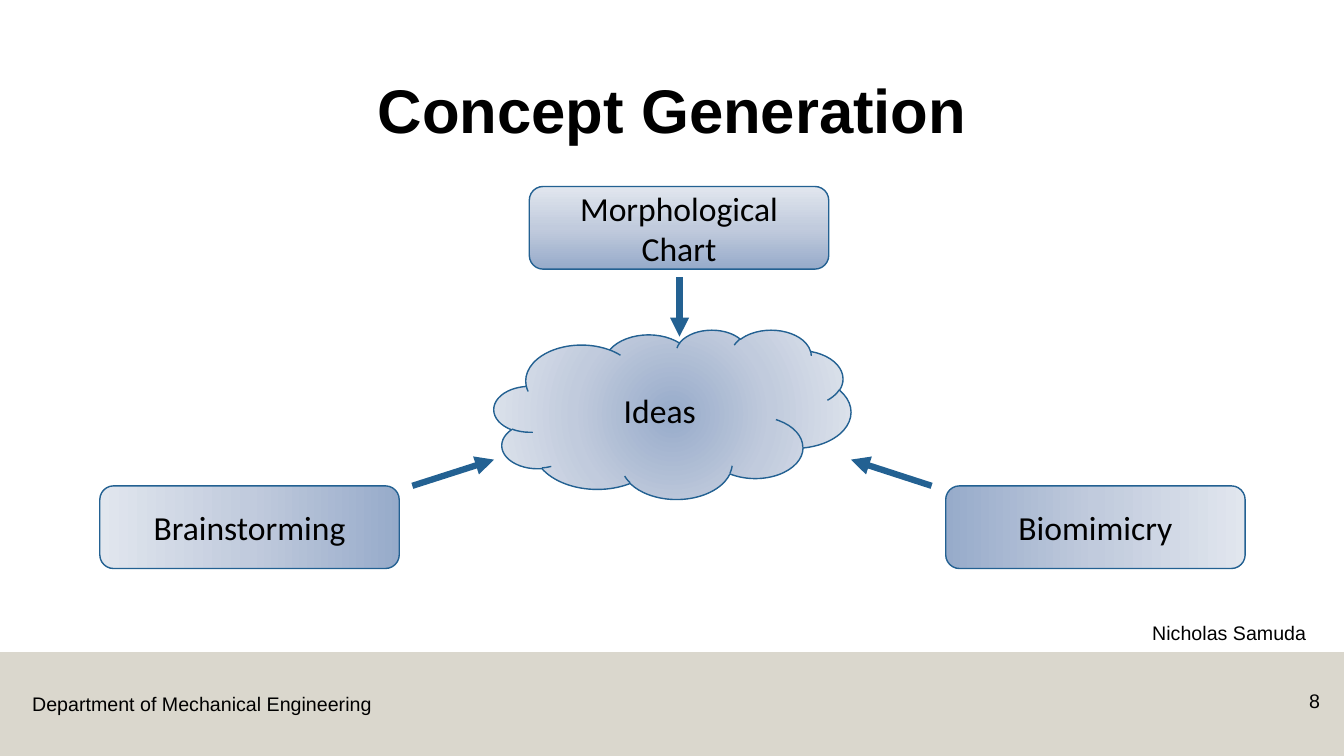
import lxml.etree
import pptx
import pptx.dml.color
import pptx.enum.shapes
import pptx.enum.text
import pptx.oxml.ns
import pptx.util

PX = 9144
COLORS = {
    "ink": "000000",
    "edge": "236192",
    "band": "B7B09C",
    "deep": "97ABCA",
    "mid": "C1CBDD",
    "pale": "E1E6EE",
}
STOPS = ((0, "deep"), (50, "mid"), (100, "pale"))
SHAPE = pptx.enum.shapes.MSO_SHAPE
ALIGN = pptx.enum.text.PP_ALIGN
ANCHOR = pptx.enum.text.MSO_ANCHOR


def emu(*sizes):
    """Turn px lengths into EMU."""
    return [size * PX for size in sizes]


def rgb(name):
    """Look up a named colour."""
    return pptx.dml.color.RGBColor.from_string(COLORS[name])


def child(node, tag, **attrs):
    """Add a drawing element with the given attributes."""
    item = lxml.etree.SubElement(node, pptx.oxml.ns.qn(tag))
    for key, value in attrs.items():
        item.set(key, str(value))
    return item


def write(frame, text, size, font, align=ALIGN.LEFT, bold=False, space=None):
    """Put one styled paragraph in a text frame."""
    para = frame.paragraphs[0]
    para.text = text
    para.alignment = align
    para.line_spacing = space
    para.font.size = pptx.util.Pt(size)
    para.font.name = font
    para.font.bold = bold
    para.font.color.rgb = rgb("ink")


def label(slide, box, text, size=14, wrap=True, anchor=ANCHOR.TOP, **style):
    """Add a text box in Arial."""
    frame = slide.shapes.add_textbox(*emu(*box)).text_frame
    frame.word_wrap = wrap
    frame.vertical_anchor = anchor
    write(frame, text, size, "Arial", **style)
    return frame


def band(slide, box):
    """Add the half-transparent footer band."""
    shape = slide.shapes.add_shape(SHAPE.RECTANGLE, *emu(*box))
    shape.shadow.inherit = False
    shape.line.fill.background()
    shape.fill.solid()
    shape.fill.fore_color.rgb = rgb("band")
    tint = next(shape.element.spPr.iter(pptx.oxml.ns.qn("a:srgbClr")))
    child(tint, "a:alpha", val=50000)


def shade(shape, angle):
    """Fill a shape with a linear gradient, or a radial one without angle."""
    shape.fill.gradient()
    grad = shape.element.spPr.find(pptx.oxml.ns.qn("a:gradFill"))
    grad.clear()
    stops = child(grad, "a:gsLst")
    for place, name in STOPS:
        stop = child(stops, "a:gs", pos=place * 1000)
        child(stop, "a:srgbClr", val=COLORS[name])
    if angle is None:
        radial = child(grad, "a:path", path="circle")
        sides = dict.fromkeys("ltrb", 50000)
        child(radial, "a:fillToRect", **sides)
    else:
        child(grad, "a:lin", ang=angle * 60000, scaled=0)


def node(slide, kind, box, text, angle=None):
    """Add a shaded shape with a centred caption."""
    shape = slide.shapes.add_shape(kind, *emu(*box))
    shape.shadow.inherit = False
    shade(shape, angle)
    shape.line.color.rgb = rgb("edge")
    shape.line.width = pptx.util.Pt(1)
    frame = shape.text_frame
    frame.word_wrap = True
    frame.vertical_anchor = ANCHOR.MIDDLE
    write(frame, text, 24, "Calibri", ALIGN.CENTER)


def arrow(slide, *ends):
    """Add a thick arrow from one point to another."""
    kind = pptx.enum.shapes.MSO_CONNECTOR.STRAIGHT
    link = slide.shapes.add_connector(kind, *emu(*ends))
    link.line.color.rgb = rgb("edge")
    link.line.width = pptx.util.Pt(4.5)
    props = link.element.spPr
    child(props.find(pptx.oxml.ns.qn("a:ln")), "a:tailEnd", type="triangle")
    child(props, "a:effectLst")


def main():
    """Build the concept generation slide."""
    deck = pptx.Presentation()
    deck.slide_width, deck.slide_height = emu(1333, 750)
    slide = deck.slides.add_slide(deck.slide_layouts[6])

    band(slide, (0, 647, 1333, 103))
    dept = label(slide, (22, 682, 359, 34), "Department of Mechanical Engineering", wrap=False)
    dept.auto_size = pptx.enum.text.MSO_AUTO_SIZE.SHAPE_TO_FIT_TEXT
    label(slide, (92, 40, 1150, 145), "Concept Generation", 44,
          anchor=ANCHOR.MIDDLE, align=ALIGN.CENTER, bold=True, space=0.9)
    label(slide, (1133, 614, 200, 34), "Nicholas Samuda", space=0.9)

    node(slide, SHAPE.CLOUD, (490, 327, 354, 168), "Ideas")
    for left, top, text, angle in (
        (99, 482, "Brainstorming", 180),
        (938, 482, "Biomimicry", 0),
        (525, 185, "Morphological Chart", 270),
    ):
        node(slide, SHAPE.ROUNDED_RECTANGLE, (left, top, 297, 82), text, angle)

    arrow(slide, 409, 482, 490, 456)
    arrow(slide, 924, 482, 844, 456)
    arrow(slide, 674, 275, 674, 334)
    label(slide, (1242, 679, 77, 40), "8", align=ALIGN.RIGHT)
    deck.save("out.pptx")


if __name__ == "__main__":
    main()
